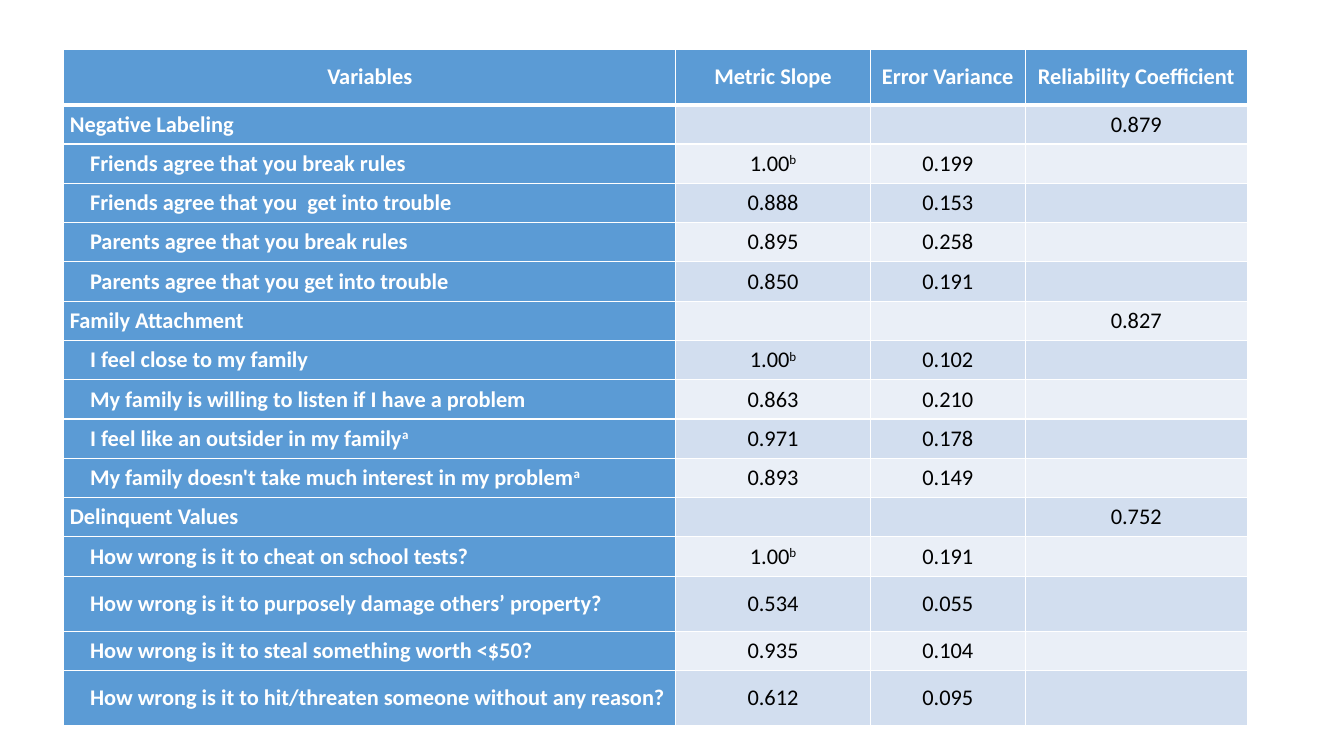
"""Build a slide with a table of slopes, error variances and reliabilities."""
from dataclasses import dataclass

from lxml.etree import SubElement
from pptx import Presentation
from pptx.dml.color import RGBColor
from pptx.enum.text import MSO_ANCHOR as Anchor, PP_ALIGN as Align
from pptx.oxml import parse_xml
from pptx.oxml.ns import nsdecls, qn
from pptx.util import Cm, Pt

HEADINGS = ("Variables", "Metric Slope", "Error Variance", "Reliability Coefficient")
GROUPS = [
    ("Negative Labeling", "0.879", [
        ("Friends agree that you break rules", "1.00^b", "0.199"),
        ("Friends agree that you  get into trouble", "0.888", "0.153"),
        ("Parents agree that you break rules", "0.895", "0.258"),
        ("Parents agree that you get into trouble", "0.850", "0.191"),
    ]),
    ("Family Attachment", "0.827", [
        ("I feel close to my family", "1.00^b", "0.102"),
        ("My family is willing to listen if I have a problem", "0.863", "0.210"),
        ("I feel like an outsider in my family^a", "0.971", "0.178"),
        ("My family doesn't take much interest in my problem^a", "0.893", "0.149"),
    ]),
    ("Delinquent Values", "0.752", [
        ("How wrong is it to cheat on school tests?", "1.00^b", "0.191"),
        ("How wrong is it to purposely damage others’ property?", "0.534", "0.055"),
        ("How wrong is it to steal something worth <$50?", "0.935", "0.104"),
        ("How wrong is it to hit/threaten someone without any reason?", "0.612", "0.095"),
    ]),
]
COLUMN_WIDTHS = (15.42, 4.9, 3.91, 5.59)
TABLE_LEFT, TABLE_TOP = 1.61, 1.25
ROW_HEIGHT, TALL_ROW_HEIGHT = 0.99, 1.39
TALL_ROWS = (0, 13, 15)
CELL_MARGIN, ITEM_INDENT = 0.15, 0.51


@dataclass(frozen=True)
class Theme:
    """Colours and type sizes."""
    font: str = "Calibri"
    size: int = 16
    accent: str = "5B9BD5"
    bands: tuple = ("EAEFF7", "D2DEEF")
    light: str = "FFFFFF"
    dark: str = "000000"
    border: float = 1
    header_border: float = 3


THEME = Theme()


def write_text(cell, text, color=THEME.dark, bold=False, align=Align.CENTER, indent=0):
    """Write text in a cell, raising whatever follows a caret."""
    paragraph = cell.text_frame.paragraphs[0]
    paragraph.alignment = align
    if indent:
        properties = paragraph._p.get_or_add_pPr()
        properties.set("marL", str(Cm(indent)))
        properties.set("indent", "0")
    base, _, mark = text.partition("^")
    for part, baseline in ((base, 0), (mark, 30000)):
        if not part:
            continue
        run = paragraph.add_run()
        run.text = part
        run.font.name = THEME.font
        run.font.size = Pt(THEME.size)
        run.font.bold = bold
        run.font.color.rgb = RGBColor.from_string(color)
        if baseline:
            run._r.get_or_add_rPr().set("baseline", str(baseline))


def style_cell(cell, fill, top=THEME.border, bottom=THEME.border):
    """Set the fill, margins, anchor and borders of a cell."""
    cell.fill.solid()
    cell.fill.fore_color.rgb = RGBColor.from_string(fill)
    cell.margin_left = cell.margin_right = Cm(CELL_MARGIN)
    cell.margin_top = cell.margin_bottom = 0
    cell.vertical_anchor = Anchor.MIDDLE
    widths = {"lnL": THEME.border, "lnR": THEME.border, "lnT": top, "lnB": bottom}
    for position, (side, width) in enumerate(widths.items()):
        line = parse_xml(f'<a:{side} {nsdecls("a")} w="{Pt(width)}"/>')
        solid = SubElement(line, qn("a:solidFill"))
        SubElement(solid, qn("a:srgbClr")).set("val", THEME.light)
        cell._tc.get_or_add_tcPr().insert(position, line)


def table_rows():
    """List each row as its texts and the indent of its label."""
    rows = [(HEADINGS, 0)]
    for name, reliability, items in GROUPS:
        rows.append(((name, "", "", reliability), 0))
        rows += [((*item, ""), ITEM_INDENT) for item in items]
    return rows


def add_reliability_table(slide):
    """Add the table and fill it row by row."""
    rows = table_rows()
    heights = [TALL_ROW_HEIGHT if index in TALL_ROWS else ROW_HEIGHT
               for index in range(len(rows))]
    table = slide.shapes.add_table(
        len(rows), len(HEADINGS), Cm(TABLE_LEFT), Cm(TABLE_TOP),
        Cm(sum(COLUMN_WIDTHS)), Cm(sum(heights))).table
    for column, width in zip(table.columns, COLUMN_WIDTHS):
        column.width = Cm(width)
    for row_index, (texts, indent) in enumerate(rows):
        table.rows[row_index].height = Cm(heights[row_index])
        is_header = row_index == 0
        top = THEME.header_border if row_index == 1 else THEME.border
        bottom = THEME.header_border if is_header else THEME.border
        for column_index, text in enumerate(texts):
            cell = table.cell(row_index, column_index)
            is_label = column_index == 0 and not is_header
            accented = is_header or is_label
            fill = THEME.accent if accented else THEME.bands[row_index % 2]
            style_cell(cell, fill, top, bottom)
            write_text(cell, text, bold=accented,
                       color=THEME.light if accented else THEME.dark,
                       align=Align.LEFT if is_label else Align.CENTER,
                       indent=indent if is_label else 0)


def main():
    """Create and save the presentation."""
    presentation = Presentation()
    presentation.slide_width, presentation.slide_height = Cm(33.87), Cm(19.05)
    slide = presentation.slides.add_slide(presentation.slide_layouts[6])
    add_reliability_table(slide)
    presentation.save("out.pptx")


if __name__ == "__main__":
    main()
